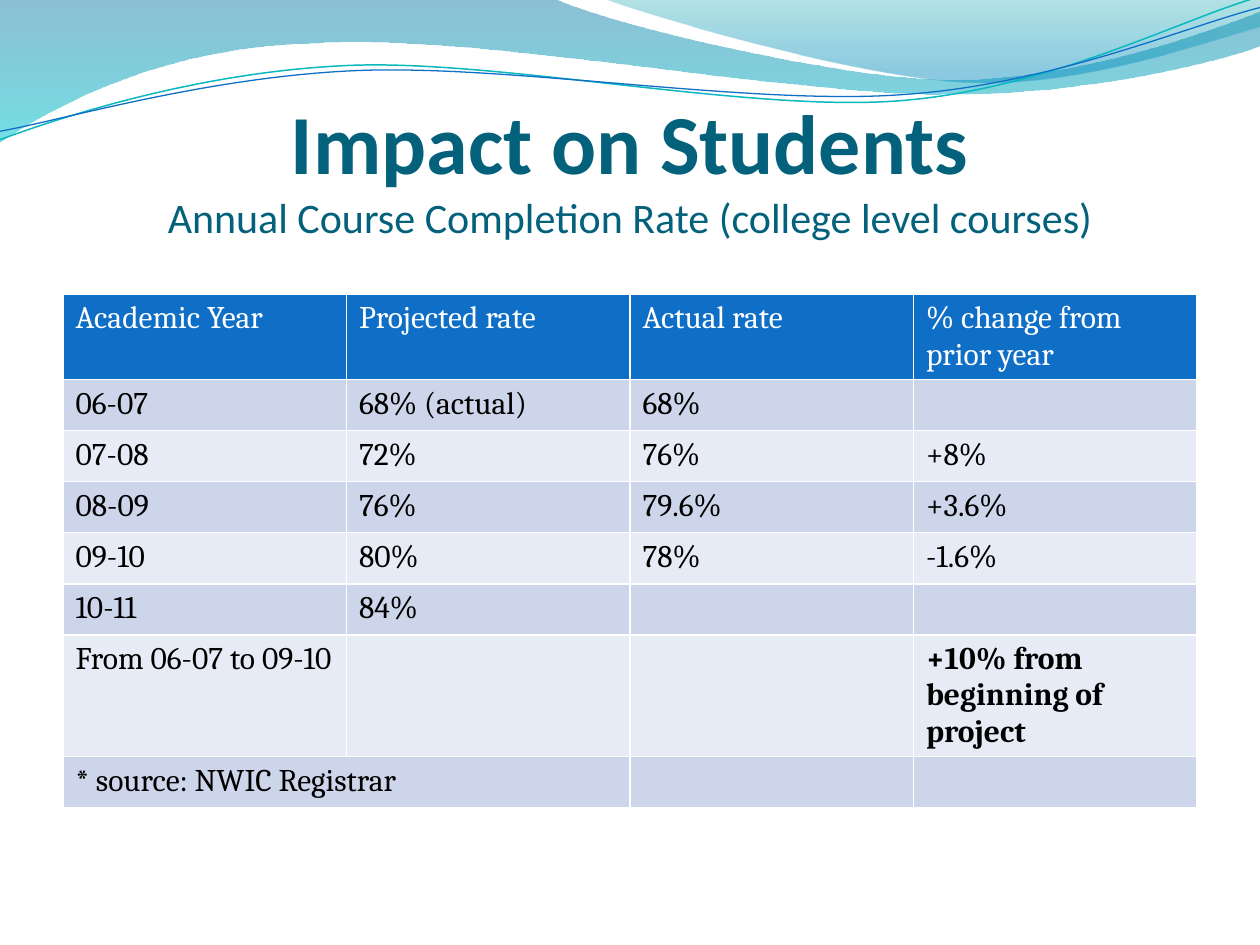
from lxml.etree import SubElement as Sub
from pptx import Presentation as Deck
from pptx.dml.color import RGBColor as RGB
from pptx.enum.text import MSO_ANCHOR as Anchor, MSO_AUTO_SIZE as Fit, PP_ALIGN as Align
from pptx.oxml.ns import qn
from pptx.util import Pt

WHITE = RGB(0xFF, 0xFF, 0xFF)
BLACK = RGB(0, 0, 0)
NAVY = RGB(0x04, 0x61, 0x7B)
BLUE = RGB(0x0F, 0x6F, 0xC6)
AQUA = RGB(0x0A, 0xB8, 0xBF)
DARK = RGB(0xCC, 0xD5, 0xEA)
PALE = RGB(0xE7, 0xEB, 0xF5)
TILT = 357.3

BAND = [
    [(0, 0)],
    [(316.8, -0.7)],
    [(342.7, 12.2), (478.1, 45.4), (545.8, 45.4)],
    [(614.2, 45.4), (689.8, 18.7), (720, 6.5)],
    [(720.7, 25.9)],
    [(707.8, 31.7), (626.4, 54.7), (537.1, 54)],
    [(447.8, 54), (275, 20.2), (185, 24.5)],
    [(92.9, 25.9), (33.1, 59.8), (-0.7, 81.4)],
]
VEIL = [
    [(344.9, -0.7)],
    [(366.5, 7.9), (491, 44.6), (553.7, 46.8)],
    [(616.3, 49.7), (691.9, 23), (720, 15.1)],
    [(720, 0)],
]
UPPER = [
    [(-1.4, 62.9)],
    [(33.8, 51.7), (114.1, 29.4), (199.8, 29.9)],
    [(284.9, 30.3), (425.8, 67.3), (512.4, 64.9)],
    [(599, 62.4), (676.4, 25.7), (720.2, 15.5)],
]
LOWER = [
    [(-1.1, 58)],
    [(32.9, 53.8), (118.3, 32.5), (204.1, 33)],
    [(290.6, 33.4), (428.9, 63.8), (515.5, 61.4)],
    [(601.3, 59.6), (678.4, 30.1), (721.4, 21.3)],
]
BAND_STOPS = [(0, RGB(0x00, 0x74, 0xA1), 45), (1, RGB(0x00, 0xC6, 0xCF), 55)]
VEIL_STOPS = [(0, RGB(0x00, 0xA1, 0xA9), 30), (0.8, RGB(0x00, 0x8B, 0xBF), 45)]

ROWS = [
    ["Academic Year", "Projected rate", "Actual rate", "% change from prior year"],
    ["06-07", "68% (actual)", "68%", ""],
    ["07-08", "72%", "76%", "+8%"],
    ["08-09", "76%", "79.6%", "+3.6%"],
    ["09-10", "80%", "78%", "-1.6%"],
    ["10-11", "84%", "", ""],
    ["From 06-07 to 09-10", "", "", "+10% from beginning of project"],
    ["* source: NWIC Registrar", "", "", ""],
]


def style(font, name, size, color, bold=False):
    """Set the face, size, colour and weight of a font."""
    font.name, font.size, font.bold = name, Pt(size), bold
    font.color.rgb = color


def add_curve(slide, parts, close):
    """Draw a freeform whose three-point parts are cubic curves."""
    dots = [(Pt(x), Pt(y)) for part in parts for x, y in part]
    pen = slide.shapes.build_freeform(*dots[0])
    pen.add_line_segments(dots[1:], close=close)
    shape = pen.convert_to_shape()
    shape.shadow.inherit = False
    lines = iter(list(shape._element.spPr.iter(qn("a:lnTo"))))
    for part in parts[1:]:
        first, *rest = [next(lines) for _ in part]
        if rest:
            first.tag = qn("a:cubicBezTo")
            for line in rest:
                first.append(line[0])
                line.getparent().remove(line)
    return shape


def add_wave(slide, parts, stops):
    """Add a closed wave with a translucent vertical gradient."""
    shape = add_curve(slide, parts, True)
    shape.line.fill.background()
    shape.fill.gradient()
    shape.fill.gradient_angle = 270
    for stop, (place, color, _) in zip(shape.fill.gradient_stops, stops):
        stop.position, stop.color.rgb = place, color
    tints = shape._element.spPr.iter(qn("a:srgbClr"))
    for tint, (_, _, alpha) in zip(list(tints), stops):
        Sub(tint, qn("a:alpha"), val=str(alpha * 1000))


def add_line(slide, parts, color, width):
    """Add an open, tilted curved line."""
    shape = add_curve(slide, parts, False)
    shape.rotation = TILT
    shape.fill.background()
    shape.line.color.rgb, shape.line.width = color, Pt(width)


def set_title(slide, head, note):
    """Fill the title with a bold heading and a smaller second line."""
    title = slide.shapes.title
    slide.shapes._spTree.append(title._element)
    title.left, title.top, title.width, title.height = Pt(36), Pt(21.6), Pt(648), Pt(116.6)
    frame = title.text_frame
    frame.text = f"{head}\v{note}"
    frame.auto_size, frame.word_wrap = Fit.NONE, True
    frame.vertical_anchor = Anchor.BOTTOM
    frame.margin_left = frame.margin_right = frame.margin_bottom = Pt(0)
    frame.margin_top = Pt(3.6)
    para = frame.paragraphs[0]
    para.alignment = Align.CENTER
    for run, size, bold in zip(para.runs, (48, 24), (True, False)):
        style(run.font, "Calibri", size, NAVY, bold)


def set_edges(cell):
    """Give a cell thin white borders."""
    props = cell._tc.get_or_add_tcPr()
    for side in "LRTB":
        edge = Sub(props, qn(f"a:ln{side}"), w=str(Pt(1)))
        Sub(Sub(edge, qn("a:solidFill")), qn("a:srgbClr"), val=str(WHITE))


def add_rates(slide):
    """Add the table of completion rates."""
    count = len(ROWS)
    frame = slide.shapes.add_table(count, 4, Pt(36), Pt(168), Pt(648), Pt(29.2 * count))
    table = frame.table
    for r, row in enumerate(ROWS):
        for c, text in enumerate(row):
            cell = table.cell(r, c)
            set_edges(cell)
            cell.fill.solid()
            cell.fill.fore_color.rgb = BLUE if r == 0 else DARK if r % 2 else PALE
            cell.text = text
            color = WHITE if r == 0 else BLACK
            for run in cell.text_frame.paragraphs[0].runs:
                style(run.font, "Cambria", 18, color, text.startswith("+10%"))
    table.cell(count - 1, 0).merge(table.cell(count - 1, 1))


def main():
    """Build and save the slide."""
    deck = Deck()
    deck.slide_width, deck.slide_height = Pt(720), Pt(540)
    slide = deck.slides.add_slide(deck.slide_layouts[5])
    add_wave(slide, BAND, BAND_STOPS)
    add_wave(slide, VEIL, VEIL_STOPS)
    add_line(slide, UPPER, AQUA, 0.85)
    add_line(slide, LOWER, BLUE, 0.75)
    set_title(slide, "Impact on Students", "Annual Course Completion Rate (college level courses)")
    add_rates(slide)
    deck.save("out.pptx")


if __name__ == "__main__":
    main()
